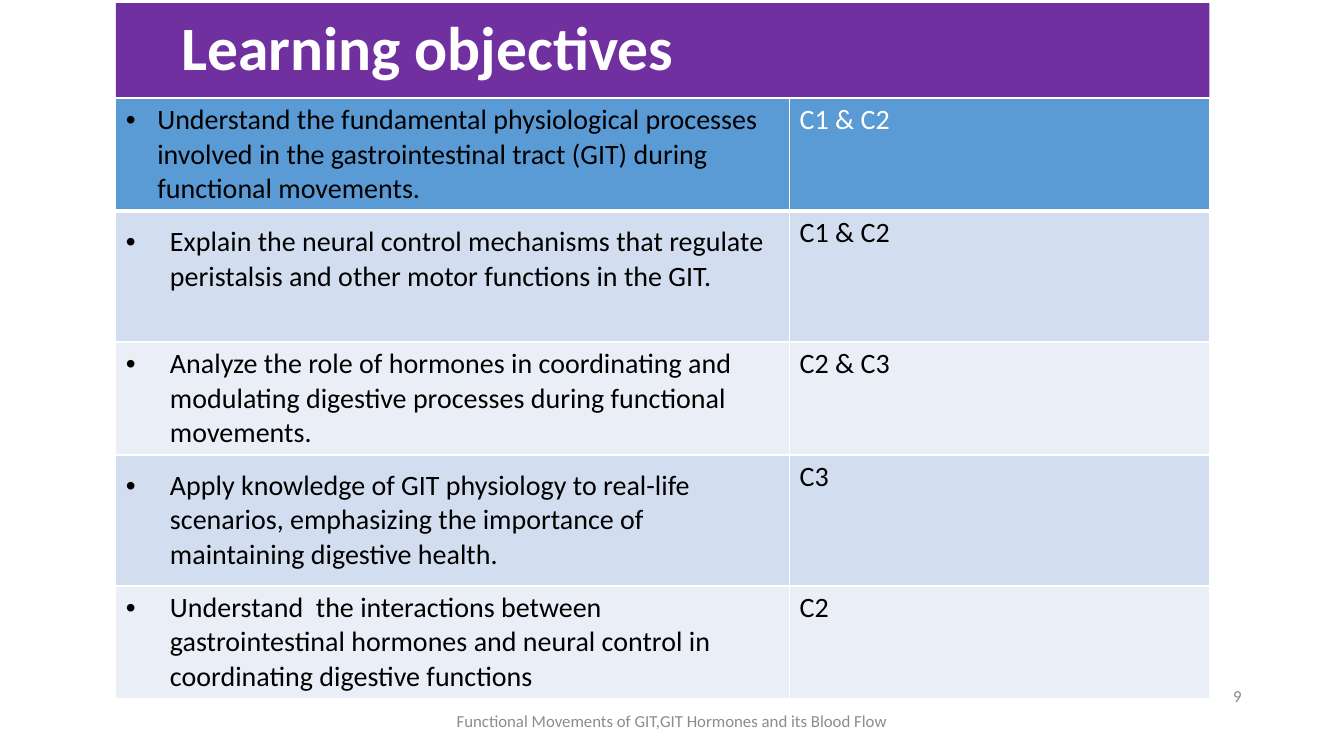
from pptx import Presentation
from pptx.dml.color import RGBColor
from pptx.enum.shapes import MSO_SHAPE
from pptx.enum.text import MSO_ANCHOR, PP_ALIGN
from pptx.oxml import parse_xml
from pptx.oxml.ns import nsdecls
from pptx.util import Cm, Pt

FONT = "Calibri"
HEADER_FILL = "5B9BD5"
BAND_FILLS = ("D2DEEF", "EAEFF7")
COLUMN_WIDTHS = (16.98, 10.58)
ROW_HEIGHTS = (2.83, 3.3, 2.84, 3.3, 2.84)
LINE_HEIGHT = 0.86

OBJECTIVES = [
    ("Understand the fundamental physiological processes involved in the "
     "gastrointestinal tract (GIT) during functional movements.", "C1 & C2"),
    ("Explain the neural control mechanisms that regulate peristalsis and "
     "other motor functions in the GIT.", "C1 & C2"),
    ("Analyze the role of hormones in coordinating and modulating digestive "
     "processes during functional movements.", "C2 & C3"),
    ("Apply knowledge of GIT physiology to real-life scenarios, emphasizing "
     "the importance of maintaining digestive health.", "C3"),
    ("Understand  the interactions between gastrointestinal hormones and "
     "neural control in coordinating digestive functions", "C2"),
]


def rgb(value):
    return RGBColor.from_string(value)


def add_run(p, text, size, color, bold=False):
    r = p.add_run()
    r.text = text
    r.font.name = FONT
    r.font.size = Pt(size)
    r.font.bold = bold
    r.font.color.rgb = rgb(color)


def add_title(slide, text):
    sp = slide.shapes.add_shape(MSO_SHAPE.RECTANGLE, Cm(2.92), Cm(0.08), Cm(27.56), Cm(2.4))
    sp.shadow.inherit = False
    sp.fill.solid()
    sp.fill.fore_color.rgb = rgb("7030A0")
    sp.line.fill.background()
    tf = sp.text_frame
    tf.margin_left = Cm(1.65)
    tf.vertical_anchor = MSO_ANCHOR.MIDDLE
    p = tf.paragraphs[0]
    p.alignment = PP_ALIGN.LEFT
    p.line_spacing = 0.9
    add_run(p, text, 44, "FFFFFF", bold=True)


def add_label(slide, text, left, top, width, align, color):
    sp = slide.shapes.add_textbox(Cm(left), Cm(top), Cm(width), Cm(1.02))
    tf = sp.text_frame
    tf.word_wrap = True
    tf.vertical_anchor = MSO_ANCHOR.MIDDLE
    p = tf.paragraphs[0]
    p.alignment = align
    add_run(p, text, 12, color)


def set_bullet(p, indent):
    pPr = p._p.get_or_add_pPr()
    pPr.set("marL", str(Cm(indent)))
    pPr.set("indent", str(-Cm(indent)))
    pPr.append(parse_xml(f'<a:buFont {nsdecls("a")} typeface="Arial"/>'))
    pPr.append(parse_xml(f'<a:buChar {nsdecls("a")} char="•"/>'))


def style_cell(cell, fill, bottom_width):
    """Give the cell white borders and a solid fill."""
    tcPr = cell._tc.get_or_add_tcPr()
    for side, width in (("L", 1), ("R", 1), ("T", 1), ("B", bottom_width)):
        tcPr.append(parse_xml(
            f'<a:ln{side} {nsdecls("a")} w="{Pt(width)}"><a:solidFill>'
            f'<a:srgbClr val="FFFFFF"/></a:solidFill></a:ln{side}>'))
    cell.fill.solid()
    cell.fill.fore_color.rgb = rgb(fill)


def add_objectives_table(slide):
    frame = slide.shapes.add_table(len(OBJECTIVES), 2, Cm(2.92), Cm(2.47),
                                   Cm(sum(COLUMN_WIDTHS)), Cm(sum(ROW_HEIGHTS)))
    table = frame.table
    table.first_row = table.horz_banding = False
    for column, width in zip(table.columns, COLUMN_WIDTHS):
        column.width = Cm(width)
    for i, (objective, level) in enumerate(OBJECTIVES):
        header = i == 0
        table.rows[i].height = Cm(ROW_HEIGHTS[i])
        fill = HEADER_FILL if header else BAND_FILLS[(i - 1) % 2]
        objective_cell, level_cell = table.cell(i, 0), table.cell(i, 1)
        for cell in (objective_cell, level_cell):
            style_cell(cell, fill, 3 if header else 1)
        objective_cell.vertical_anchor = MSO_ANCHOR.MIDDLE
        p = objective_cell.text_frame.paragraphs[0]
        set_bullet(p, 0.79 if header else 1.11)
        add_run(p, objective, 20, "000000")
        add_run(level_cell.text_frame.paragraphs[0], level, 20,
                "FFFFFF" if header else "000000")
    # The two-line objective sits as high as the three-line ones
    table.cell(1, 0).margin_bottom = Cm(0.13 + LINE_HEIGHT)


def main():
    prs = Presentation()
    prs.slide_width, prs.slide_height = Cm(33.87), Cm(19.05)
    slide = prs.slides.add_slide(prs.slide_layouts[6])
    add_title(slide, "Learning objectives")
    add_objectives_table(slide)
    add_label(slide, "Functional Movements of GIT,GIT Hormones and its Blood Flow",
              11.22, 17.66, 11.43, PP_ALIGN.CENTER, "8C8C8C")
    add_label(slide, "9", 23.92, 17.02, 7.62, PP_ALIGN.RIGHT, "898989")
    prs.save("out.pptx")


if __name__ == "__main__":
    main()
